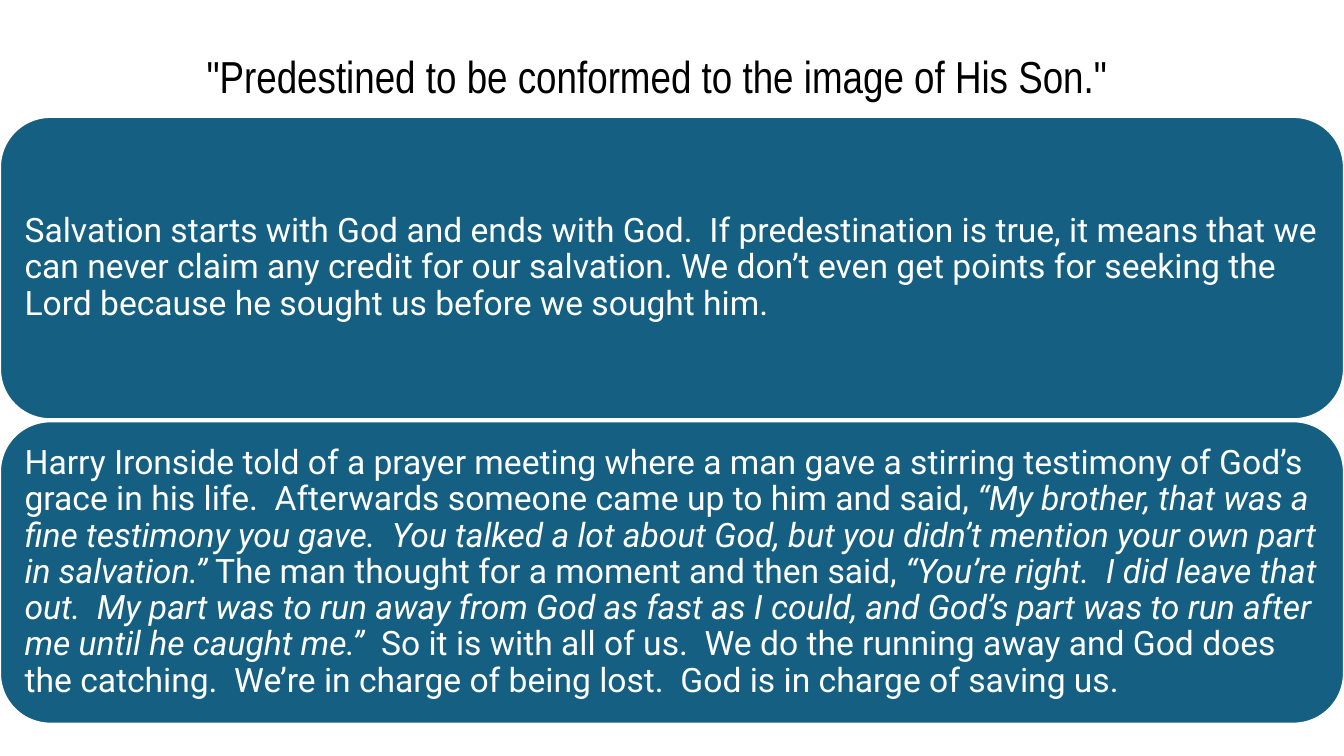
"""Build a slide with a title and two rounded panels of text."""
from pptx import Presentation
from pptx.dml.color import RGBColor
from pptx.enum.shapes import MSO_SHAPE as Shape
from pptx.enum.text import MSO_ANCHOR as Anchor, MSO_AUTO_SIZE as Fit, PP_ALIGN as Align
from pptx.util import Inches, Pt

BLACK = RGBColor(0, 0, 0)
WHITE = RGBColor(255, 255, 255)
BLUE = RGBColor(0x15, 0x60, 0x82)

WIDE, HIGH = Inches(13.33), Inches(7.5)
TOP, TALL, STEP = 1.16 / 7.5, 0.4, 3.02 / 7.5

TITLE = '"Predestined to be conformed to the image of His Son."'
PANELS = [
    ["Salvation starts with God and ends with God.  If predestination is true, "
     "it means that we can never claim any credit for our salvation. We don’t even "
     "get points for seeking the Lord because he sought us before we sought him."],
    ["Harry Ironside told of a prayer meeting where a man gave a stirring testimony "
     "of God’s grace in his life.  Afterwards someone came up to him and said, ",
     "“My brother, that was a fine testimony you gave.  You talked a lot about God, "
     "but you didn’t mention your own part in salvation.”",
     " The man thought for a moment and then said, ",
     "“You’re right.  I did leave that out.  My part was to run away from God as fast "
     "as I could, and God’s part was to run after me until he caught me.”",
     "  So it is with all of us.  We do the running away and God does the catching.  "
     "We’re in charge of being lost.  God is in charge of saving us."],
]


def place(shape, left, top, width, height):
    shape.left, shape.top = int(left * WIDE), int(top * HIGH)
    shape.width, shape.height = int(width * WIDE), int(height * HIGH)


def write(shape, parts, font, size, color, align, anchor, space, pad):
    frame = shape.text_frame
    frame.word_wrap, frame.auto_size = True, Fit.NONE
    frame.vertical_anchor = anchor
    frame.margin_left = frame.margin_right = Inches(0.1)
    frame.margin_top = frame.margin_bottom = Inches(pad)
    para = frame.paragraphs[0]
    para.alignment, para.line_spacing = align, space
    para.space_before = Pt(0)
    for order, part in enumerate(parts):
        run = para.add_run()
        run.text = part
        run.font.name, run.font.size = font, Pt(size)
        run.font.color.rgb = color
        run.font.italic = order % 2 == 1


def head(slide):
    title = slide.shapes.title
    place(title, 1.02 / 13.33, 0.4 / 7.5, 11 / 13.33, 0.63 / 7.5)
    write(title, [TITLE], font="Arial Narrow", size=32, color=BLACK,
          align=Align.CENTER, anchor=Anchor.TOP, space=1.07, pad=0.05)


def panel(slide, row, parts):
    box = slide.shapes.add_shape(Shape.ROUNDED_RECTANGLE, 0, 0, WIDE, HIGH)
    place(box, 0, TOP + row * STEP, 1, TALL)
    box.shadow.inherit = False
    box.fill.solid()
    box.fill.fore_color.rgb = BLUE
    box.line.color.rgb = WHITE
    box.line.width = Pt(1.5)
    write(box, parts, font="Roboto", size=24, color=WHITE,
          align=Align.LEFT, anchor=Anchor.MIDDLE, space=0.9, pad=0.1)


def main():
    deck = Presentation()
    deck.slide_width, deck.slide_height = WIDE, HIGH
    slide = deck.slides.add_slide(deck.slide_layouts[5])
    head(slide)
    for row, parts in enumerate(PANELS):
        panel(slide, row, parts)
    deck.save("out.pptx")


if __name__ == "__main__":
    main()
